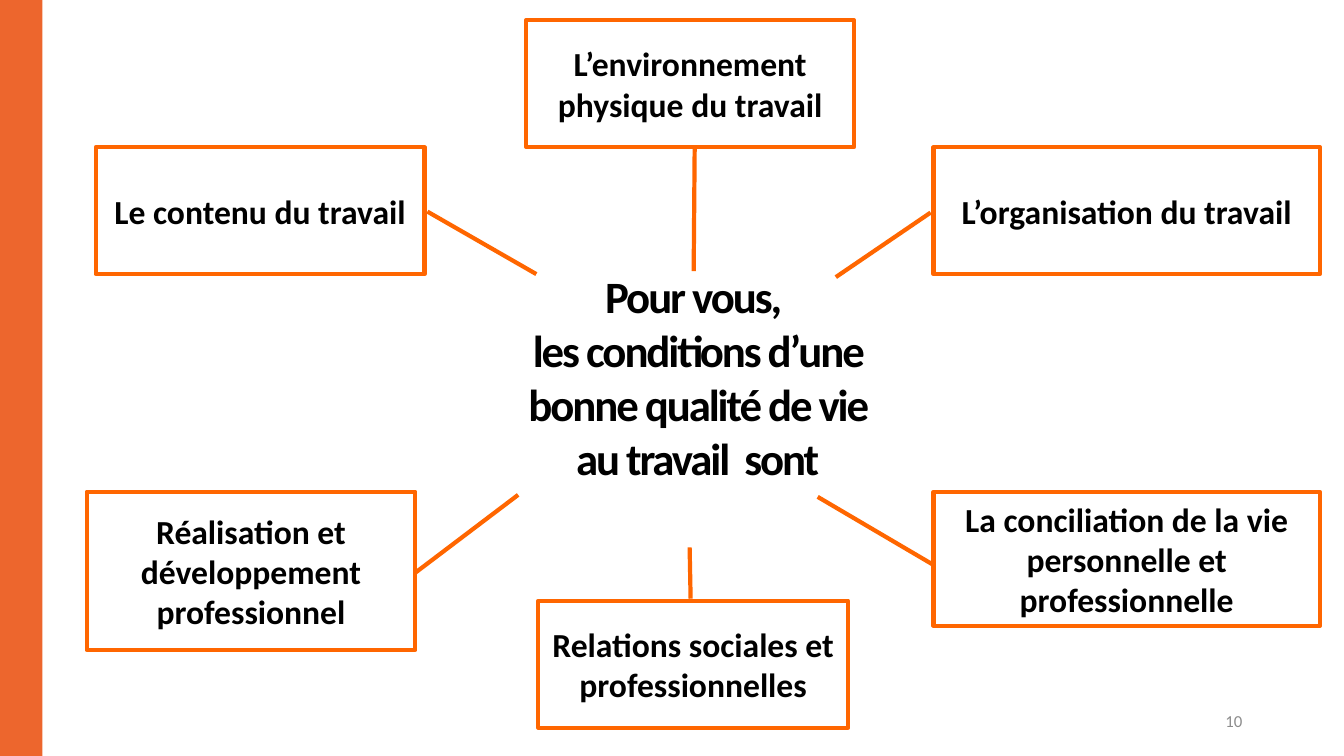
from pptx import Presentation
from pptx.dml.color import RGBColor
from pptx.enum.shapes import MSO_SHAPE
from pptx.enum.text import MSO_ANCHOR, MSO_AUTO_SIZE, PP_ALIGN
from pptx.util import Emu, Pt

# Content: lengths in px, 100 px to the inch
PX = 9144
SLIDE_SIZE = (1333, 750)
FONT = "Calibri"
COLORS = {
    "band": "ED662D",
    "border": "FF6600",
    "paper": "FFFFFF",
    "ink": "000000",
    "page": "8C8C8C",
}

BAND_BOX = (0, 0, 42, 750)
QUESTION = "Pour vous, \vles conditions d’une bonne qualité de vie au travail  sont"
QUESTION_BOX = (495, 262, 394, 226)
PAGE_NUMBER = "10"
PAGE_BOX = (942, 695, 300, 40)

# Condition, box, leader start (x, y), leader end (x, y)
CONDITIONS = [
    ("Le contenu du travail", (95, 146, 326, 126), (424, 210), (532, 272)),
    ("L’environnement physique du travail", (522, 20, 325, 126), (689, 148), (688, 269)),
    ("L’organisation du travail", (926, 146, 383, 126), (923, 211), (829, 275)),
    ("La conciliation de la vie personnelle et professionnelle",
     (926, 488, 383, 133), (925, 560), (811, 493)),
    ("Relations sociales et professionnelles", (534, 596, 307, 126), (685, 594), (684, 543)),
    ("Réalisation et développement professionnel",
     (86, 488, 326, 157), (411, 569), (514, 491)),
]


def emu(box):
    return [Emu(length * PX) for length in box]


def color(name):
    return RGBColor.from_string(COLORS[name])


def write(shape, text, size, ink, align, anchor, bold=True):
    frame = shape.text_frame
    frame.word_wrap = True
    frame.auto_size = MSO_AUTO_SIZE.NONE
    frame.vertical_anchor = anchor
    frame.text = text
    paragraph = frame.paragraphs[0]
    paragraph.alignment = align
    paragraph.font.name = FONT
    paragraph.font.size = Pt(size)
    paragraph.font.bold = bold
    paragraph.font.color.rgb = color(ink)
    return paragraph


def add_filled(slide, kind, box, fill):
    shape = slide.shapes.add_shape(kind, *emu(box))
    shape.shadow.inherit = False
    shape.fill.solid()
    shape.fill.fore_color.rgb = color(fill)
    return shape


def add_condition(slide, text, box, start, end):
    callout = add_filled(slide, MSO_SHAPE.LINE_CALLOUT_1, box, "paper")
    callout.line.color.rgb = color("border")
    callout.line.width = Pt(3)
    # Leader ends are fractions of the box, y before x
    left, top, width, height = box
    for i, (x, y) in enumerate((start, end)):
        callout.adjustments[2 * i] = (y - top) / height
        callout.adjustments[2 * i + 1] = (x - left) / width
    write(callout, text, 24, "ink", PP_ALIGN.CENTER, MSO_ANCHOR.MIDDLE)


def main():
    deck = Presentation()
    deck.slide_width, deck.slide_height = emu(SLIDE_SIZE)
    slide = deck.slides.add_slide(deck.slide_layouts[5])

    # Side band
    band = add_filled(slide, MSO_SHAPE.RECTANGLE, BAND_BOX, "band")
    band.line.fill.background()

    # Central question, with tightened letters
    question = slide.shapes.title
    question.left, question.top, question.width, question.height = emu(QUESTION_BOX)
    wording = write(question, QUESTION, 32, "ink", PP_ALIGN.CENTER, MSO_ANCHOR.TOP)
    for run in wording.runs:
        run.font._element.set("spc", "-150")

    # Conditions around the question
    for condition in CONDITIONS:
        add_condition(slide, *condition)

    # Page number
    page = slide.shapes.add_textbox(*emu(PAGE_BOX))
    write(page, PAGE_NUMBER, 12, "page", PP_ALIGN.RIGHT, MSO_ANCHOR.MIDDLE, bold=False)

    deck.save("out.pptx")


if __name__ == "__main__":
    main()
